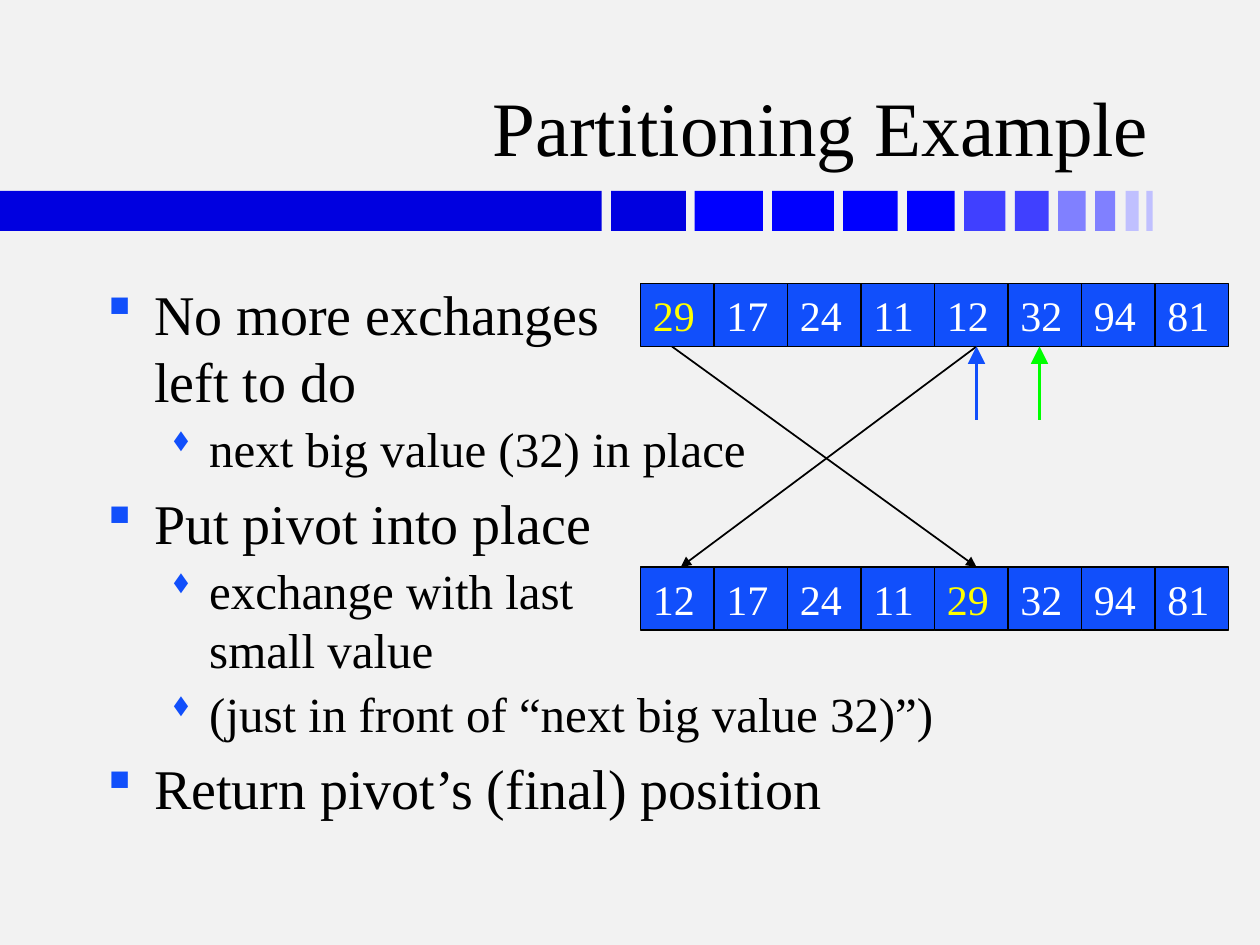
from lxml import etree
from pptx import Presentation
from pptx.dml.color import RGBColor
from pptx.enum import shapes, text
from pptx.oxml import ns
from pptx.util import Pt

COLORS = {"background": "F2F2F2", "ink": "000000", "cell": "114FFB",
          "value": "FFFFFF", "pivot": "FFFF00", "big": "00FF00",
          "bar 1": "0000E0", "bar 2": "0000FF", "bar 3": "4040FF",
          "bar 4": "8080FF", "bar 5": "C0C0FF"}


def write(paragraph, content, size, color="ink", align=text.PP_ALIGN.LEFT):
    paragraph.text = content
    paragraph.alignment = align
    for run in paragraph.runs:
        run.font.name = "Times New Roman"
        run.font.size = Pt(size)
        run.font.color.rgb = RGBColor.from_string(COLORS[color])


def add_box(left, top, width, height, color):
    box = slide.shapes.add_shape(shapes.MSO_SHAPE.RECTANGLE,
                                 Pt(left), Pt(top), Pt(width), Pt(height))
    box.shadow.inherit = False
    box.fill.solid()
    box.fill.fore_color.rgb = RGBColor.from_string(COLORS[color])
    box.line.fill.background()
    return box


prs = Presentation()
prs.slide_width, prs.slide_height = Pt(720), Pt(540)
slide = prs.slides.add_slide(prs.slide_layouts[5])
slide.background.fill.solid()
slide.background.fill.fore_color.rgb = RGBColor.from_string(COLORS["background"])

# Fading band under the title: left, width, colour
band = [(0, 343.8, "bar 1"), (349.2, 42.8, "bar 1"), (397, 39, "bar 2"),
        (441.2, 35.3, "bar 2"), (481.8, 31.2, "bar 2"), (518.3, 27.3, "bar 2"),
        (550.9, 23.6, "bar 3"), (580, 19.2, "bar 3"), (604.6, 15.8, "bar 4"),
        (625.8, 11.5, "bar 4"), (643.2, 7.4, "bar 5"), (655, 3.6, "bar 5")]
for left, width, color in band:
    add_box(left, 109.1, width, 22.9, color)

title = slide.shapes.title
title.left, title.top, title.width, title.height = Pt(53.5), Pt(13.5), Pt(610.5), Pt(88.5)
title.text_frame.vertical_anchor = text.MSO_ANCHOR.BOTTOM
write(title.text_frame.paragraphs[0], "Partitioning Example", 44,
      align=text.PP_ALIGN.RIGHT)

# Outline: level and wording
steps = [(0, "No more exchanges\vleft to do"),
         (1, "next big value (32) in place"),
         (0, "Put pivot into place"),
         (1, "exchange with last\vsmall value"),
         (1, "(just in front of “next big value 32)”)"),
         (0, "Return pivot’s (final) position")]
# Per level: size, space before, left margin, hanging indent, bullet;
# in Wingdings § is a small square and s a lozenge
levels = [(32, 6.4, 27, 27, "§"), (28, 2.8, 58.5, 22.5, "s")]
outline = slide.shapes.add_textbox(Pt(54), Pt(156), Pt(612), Pt(324)).text_frame
outline.word_wrap = True
for index, (level, wording) in enumerate(steps):
    size, before, margin, hanging, bullet = levels[level]
    step = outline.add_paragraph() if index else outline.paragraphs[0]
    write(step, wording, size)
    step.level = level
    step.space_before = Pt(before)
    properties = step._p.get_or_add_pPr()
    properties.set("marL", str(Pt(margin)))
    properties.set("indent", str(-Pt(hanging)))
    bullet_color = etree.SubElement(properties, ns.qn("a:buClr"))
    etree.SubElement(bullet_color, ns.qn("a:srgbClr"), val=COLORS["cell"])
    etree.SubElement(properties, ns.qn("a:buFont"), typeface="Wingdings",
                     pitchFamily="2", charset="2")
    etree.SubElement(properties, ns.qn("a:buChar"), char=bullet)

# The array before and after the pivot exchange
cell_width, cell_height, array_left = 42, 36, 366
before_top, after_top = 162, 324
arrays = [(before_top, [29, 17, 24, 11, 12, 32, 94, 81]),
          (after_top, [12, 17, 24, 11, 29, 32, 94, 81])]
for top, values in arrays:
    for column, value in enumerate(values):
        cell = add_box(array_left + column * cell_width, top,
                       cell_width, cell_height, "cell")
        cell.line.color.rgb = RGBColor.from_string(COLORS["ink"])
        cell.line.width = Pt(1)
        cell.text_frame.word_wrap = False
        cell.text_frame.vertical_anchor = text.MSO_ANCHOR.MIDDLE
        write(cell.text_frame.paragraphs[0], str(value), 24,
              "pivot" if value == 29 else "value")

# Exchange arrows, then the small and big markers: ends, colour, width, head
before_bottom = before_top + cell_height
arrows = [(384, before_bottom, 558, after_top, "ink", 1, "med"),
          (558, before_bottom, 389, after_top, "ink", 1, "med"),
          (558, 240, 558, before_bottom, "cell", 1.25, "lg"),
          (594, 240, 594, before_bottom, "big", 1.25, "lg")]
for x1, y1, x2, y2, color, width, head in arrows:
    arrow = slide.shapes.add_connector(shapes.MSO_CONNECTOR.STRAIGHT,
                                       Pt(x1), Pt(y1), Pt(x2), Pt(y2))
    arrow.line.color.rgb = RGBColor.from_string(COLORS[color])
    arrow.line.width = Pt(width)
    etree.SubElement(arrow.line._get_or_add_ln(), ns.qn("a:tailEnd"),
                     type="triangle", w=head, len=head)
    etree.SubElement(arrow._element.spPr, ns.qn("a:effectLst"))

prs.save("out.pptx")
